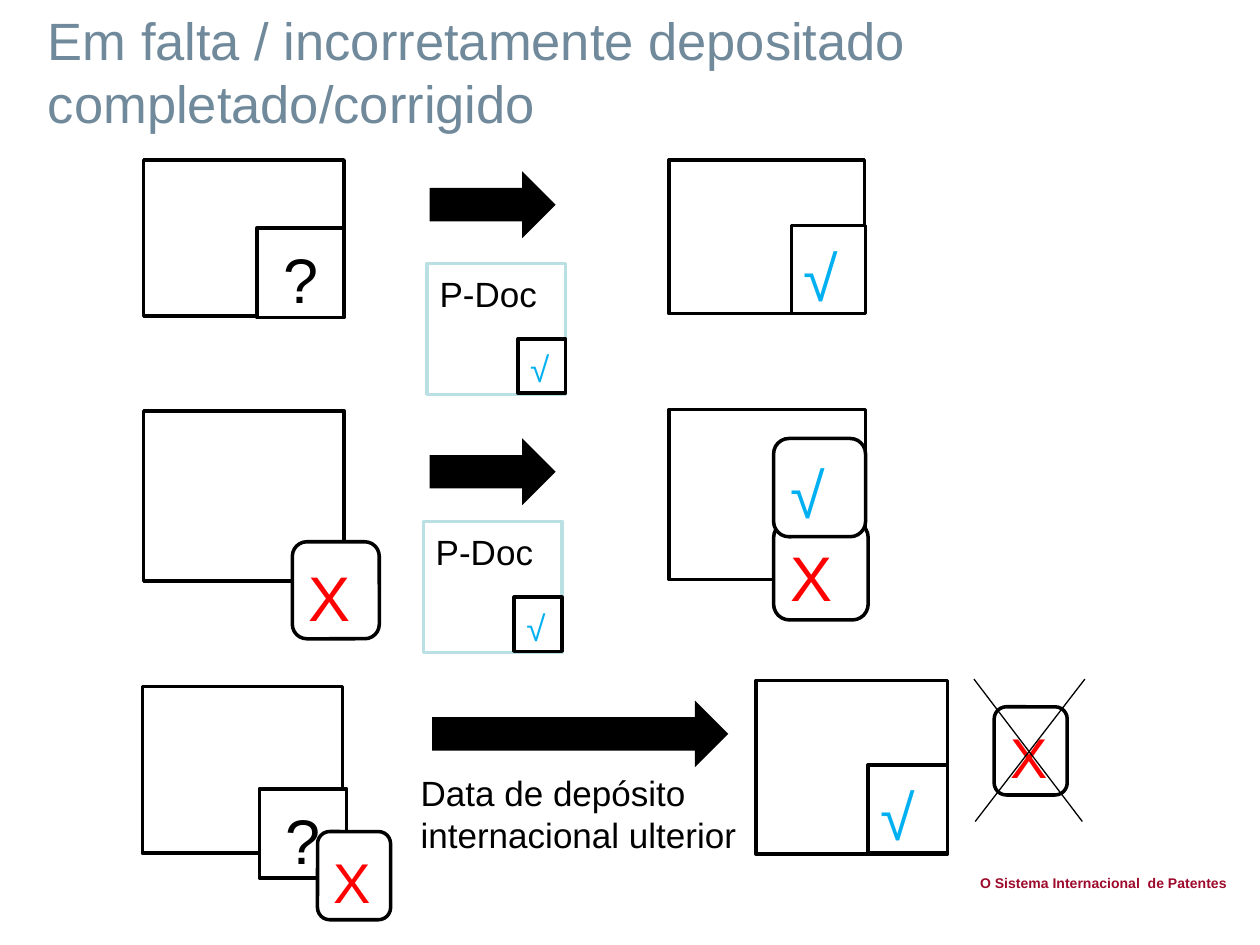
from dataclasses import dataclass

from lxml import etree
from pptx import Presentation
from pptx.dml.color import RGBColor
from pptx.enum.shapes import MSO_CONNECTOR, MSO_SHAPE
from pptx.enum.text import MSO_ANCHOR, MSO_AUTO_SIZE, PP_ALIGN
from pptx.oxml.ns import qn
from pptx.util import Inches, Pt

RECT = MSO_SHAPE.RECTANGLE
ROUNDED = MSO_SHAPE.ROUNDED_RECTANGLE
ARROW = MSO_SHAPE.RIGHT_ARROW
LEFT, CENTER = PP_ALIGN.LEFT, PP_ALIGN.CENTER
TOP, MIDDLE = MSO_ANCHOR.TOP, MSO_ANCHOR.MIDDLE
NO_AUTOFIT = MSO_AUTO_SIZE.NONE
STRAIGHT = MSO_CONNECTOR.STRAIGHT
TITLE_ONLY = 5


@dataclass(frozen=True)
class Theme:
    font: str = "Arial"
    black: str = "000000"
    white: str = "FFFFFF"
    red: str = "FF0000"
    blue: str = "00B0F0"
    pale: str = "BBE0E3"
    slate: str = "70899B"
    wine: str = "9D0A2B"
    title: int = 30
    large: int = 36
    medium: int = 32
    body: int = 20
    footer: int = 8
    outline: float = 2
    cross: float = 0.75


THEME = Theme()

# Mark on a part of the application: text, colour, alignment, outline shape
MARKS = {
    "missing": ("?", THEME.black, CENTER, RECT),
    "wrong": ("X", THEME.red, LEFT, ROUNDED),
    "right": ("√", THEME.blue, LEFT, RECT),
    "corrected": ("√", THEME.blue, LEFT, ROUNDED),
}


def rgb(value):
    return RGBColor.from_string(value)


def write(shape, text, size, color, align=LEFT, anchor=TOP, bold=False,
          wrap=True, top=0.05):
    frame = shape.text_frame
    settings = {"word_wrap": wrap, "auto_size": NO_AUTOFIT,
                "vertical_anchor": anchor, "margin_top": Inches(top),
                "margin_bottom": 0}
    for name, value in settings.items():
        setattr(frame, name, value)
    paragraph = frame.paragraphs[0]
    paragraph.text = text
    paragraph.alignment = align
    font = paragraph.runs[0].font
    settings = {"name": THEME.font, "size": Pt(size), "bold": bold}
    for name, value in settings.items():
        setattr(font, name, value)
    font.color.rgb = rgb(color)


def add_box(slide, place, kind=RECT, line=THEME.black):
    shape = slide.shapes.add_shape(kind, *map(Inches, place))
    shape.shadow.inherit = False
    shape.fill.solid()
    shape.fill.fore_color.rgb = rgb(THEME.white)
    shape.line.color.rgb = rgb(line)
    shape.line.width = Pt(THEME.outline)
    return shape


def add_mark(slide, mark, place, size=THEME.large):
    text, color, align, kind = MARKS[mark]
    shape = add_box(slide, place, kind)
    write(shape, text, size, color, align, top=0.07 if size == THEME.body else 0.1)


def add_arrow(slide, left, top, width=1):
    shape = slide.shapes.add_shape(
        ARROW, *map(Inches, (left, top, width, 0.53)))
    shape.shadow.inherit = False
    shape.fill.solid()
    shape.fill.fore_color.rgb = rgb(THEME.black)
    shape.line.fill.background()


def add_priority_document(slide, left, top):
    box = add_box(slide, (left, top, 1.1, 1.04), line=THEME.pale)
    write(box, "P-Doc", THEME.body, THEME.black, top=0.07)
    add_mark(slide, "right", (left + 0.72, top + 0.6, 0.38, 0.43), THEME.body)


def add_text(slide, text, place, size, color, **options):
    box = slide.shapes.add_textbox(*map(Inches, place))
    write(box, text, size, color, **options)


def add_line(slide, *ends):
    line = slide.shapes.add_connector(STRAIGHT, *map(Inches, ends))
    line.line.color.rgb = rgb(THEME.black)
    line.line.width = Pt(THEME.cross)
    etree.SubElement(line._element.spPr, qn("a:effectLst"))


def add_title(slide, text):
    title = slide.shapes.title
    place = {"left": 0.28, "top": -0.09, "width": 8.88, "height": 1.25}
    for name, value in place.items():
        setattr(title, name, Inches(value))
    write(title, text, THEME.title, THEME.slate, anchor=MIDDLE)


def main():
    presentation = Presentation()
    presentation.slide_width = Inches(10)
    presentation.slide_height = Inches(7.5)
    slide = presentation.slides.add_slide(
        presentation.slide_layouts[TITLE_ONLY])
    add_title(slide, "Em falta / incorretamente depositado completado/corrigido")

    # Missing part completed
    add_box(slide, (1.14, 1.27, 1.59, 1.24))
    add_mark(slide, "missing", (2.04, 1.81, 0.69, 0.71))
    add_arrow(slide, 3.41, 1.36)
    add_priority_document(slide, 3.39, 2.09)
    add_box(slide, (5.31, 1.27, 1.55, 1.22))
    add_mark(slide, "right", (6.28, 1.79, 0.59, 0.7))

    # Wrong part corrected
    add_box(slide, (1.14, 3.26, 1.59, 1.35))
    add_mark(slide, "wrong", (2.32, 4.3, 0.69, 0.77))
    add_arrow(slide, 3.41, 3.48)
    add_priority_document(slide, 3.36, 4.14)
    add_box(slide, (5.31, 3.25, 1.56, 1.35))
    add_mark(slide, "wrong", (6.14, 4.14, 0.75, 0.78))
    add_mark(slide, "corrected", (6.14, 3.48, 0.73, 0.78))

    # Later international filing date
    add_box(slide, (1.13, 5.45, 1.59, 1.32))
    add_mark(slide, "missing", (2.06, 6.26, 0.69, 0.71))
    add_mark(slide, "wrong", (2.52, 6.6, 0.58, 0.7), THEME.medium)
    add_arrow(slide, 3.43, 5.56, 2.35)
    add_box(slide, (6, 5.4, 1.52, 1.38))
    add_text(slide, "Data de depósito internacional ulterior",
             (3.24, 6.05, 2.88, 0.77), THEME.body, THEME.black, top=0.07)
    add_mark(slide, "right", (6.89, 6.07, 0.63, 0.7))

    # Wrong part crossed out
    add_mark(slide, "wrong", (7.89, 5.61, 0.58, 0.7), THEME.medium)
    add_line(slide, 7.74, 6.52, 8.61, 5.39)
    add_line(slide, 7.73, 5.39, 8.59, 6.52)

    # Footer
    add_text(slide, "O Sistema Internacional\u00a0 de Patentes".replace("\u00a0", " "),
             (7.68, 6.89, 2.16, 0.33), THEME.footer, THEME.wine,
             bold=True, wrap=False)
    presentation.save("out.pptx")


if __name__ == "__main__":
    main()
